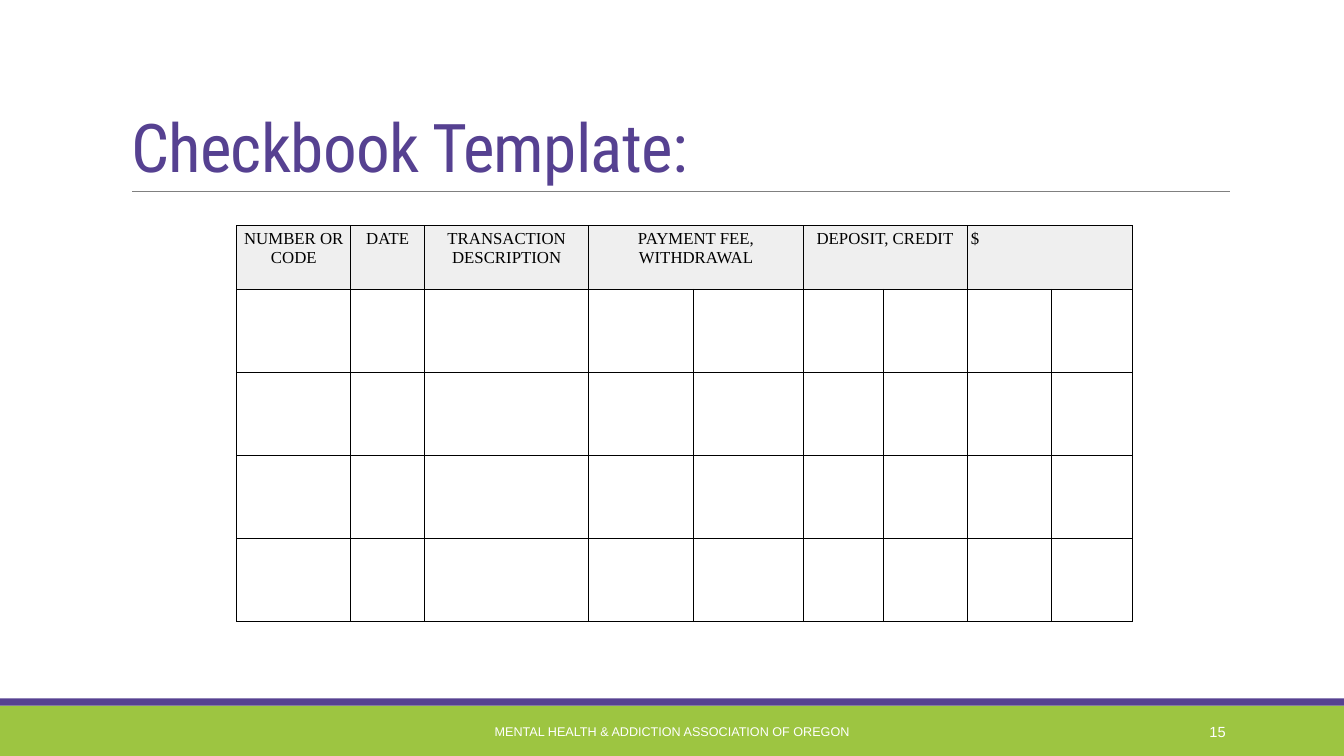
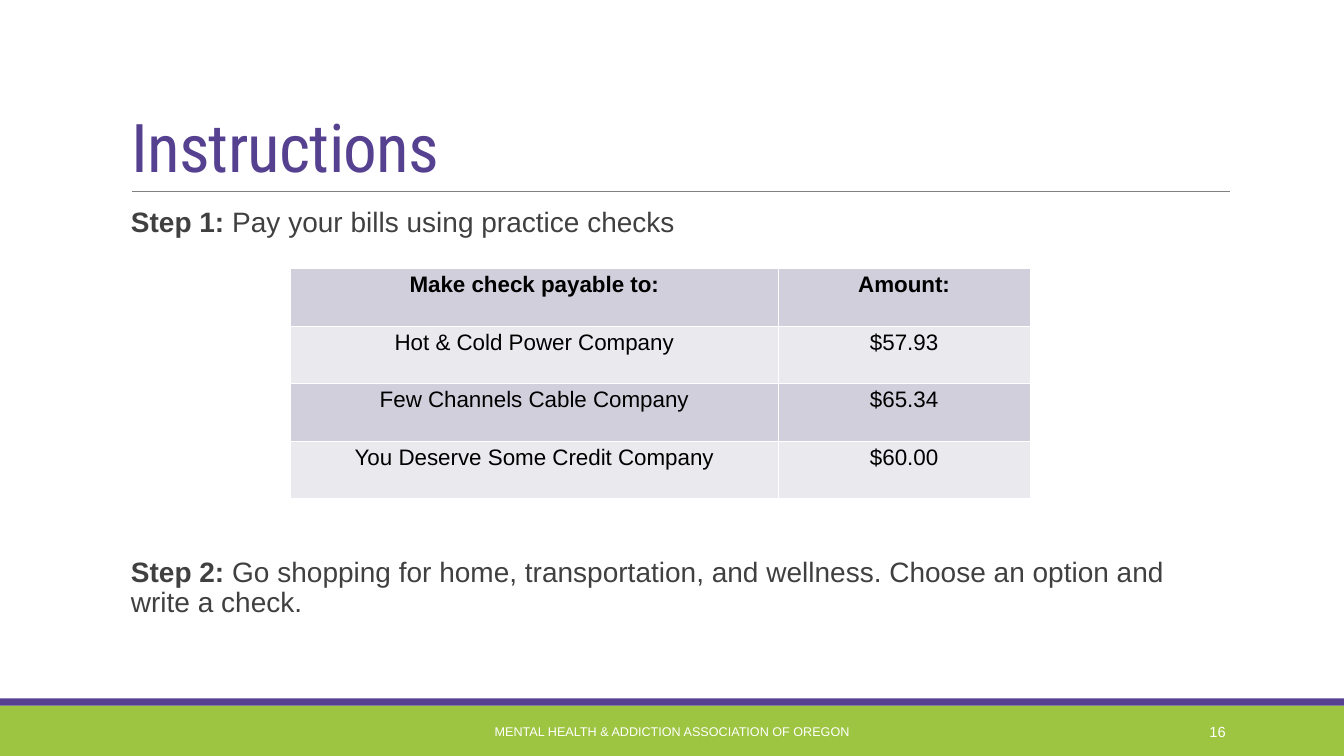
"""Build two checkbook practice slides with a shared title style, bands and footer."""
import pptx
import pptx.dml.color
import pptx.enum.shapes
import pptx.enum.text
import pptx.oxml
import pptx.oxml.ns
import pptx.util
import lxml.etree

Cm = pptx.util.Cm
Pt = pptx.util.Pt
RGB = pptx.dml.color.RGBColor.from_string
ALIGN = pptx.enum.text.PP_ALIGN
ANCHOR = pptx.enum.text.MSO_ANCHOR
qn = pptx.oxml.ns.qn

COLORS = {
    "purple": "564191", "green": "9DC541", "rule": "808080", "white": "FFFFFF",
    "black": "000000", "body": "404040", "header": "EFEFEF",
    "band_dark": "D1CFDC", "band_light": "E9E9EE",
}
WIDTH, HEIGHT = 33.87, 19.05
FOOTER = "MENTAL HEALTH & ADDICTION ASSOCIATION OF OREGON"
FIRST_NUMBER = 15


def write(p, text, size, color, font="Arial", bold=False, align=ALIGN.LEFT,
          line=1.0, after=0):
    """Add a formatted run to a paragraph."""
    p.alignment = align
    p.line_spacing = line
    p.space_before = Pt(0)
    p.space_after = Pt(after)
    r = p.add_run()
    r.text = text
    r.font.size = Pt(size)
    r.font.name = font
    r.font.bold = bold
    r.font.color.rgb = RGB(COLORS[color])
    return r


def add_grid(s, left, top, widths, heights, border, border_pt, margin_x, margin_y):
    """Add a plain table with every cell border drawn."""
    sp = s.shapes.add_table(len(heights), len(widths), Cm(left), Cm(top),
                            Cm(sum(widths)), Cm(sum(heights)))
    table = sp.table
    table.first_row = table.horz_banding = False
    for column, width in zip(table.columns, widths):
        column.width = Cm(width)
    for row, height in zip(table.rows, heights):
        row.height = Cm(height)
    for cell in table.iter_cells():
        cell.margin_left = cell.margin_right = Cm(margin_x)
        cell.margin_top = cell.margin_bottom = Cm(margin_y)
        tc_pr = cell._tc.get_or_add_tcPr()
        for side in ("a:lnL", "a:lnR", "a:lnT", "a:lnB"):
            ln = lxml.etree.SubElement(tc_pr, qn(side), w=str(Pt(border_pt)))
            fill = lxml.etree.SubElement(ln, qn("a:solidFill"))
            lxml.etree.SubElement(fill, qn("a:srgbClr"), val=COLORS[border])
        cell.fill.background()
    return table


prs = pptx.Presentation()
prs.slide_width, prs.slide_height = Cm(WIDTH), Cm(HEIGHT)

slides = []
for number, title in enumerate(["Checkbook Template:", "Instructions"], FIRST_NUMBER):
    s = prs.slides.add_slide(prs.slide_layouts[5])
    slides.append(s)

    for top, height, color in [(17.78, 1.27, "green"), (17.6, 0.18, "purple")]:
        sp = s.shapes.add_shape(pptx.enum.shapes.MSO_SHAPE.RECTANGLE,
                                0, Cm(top), Cm(WIDTH), Cm(height))
        sp.shadow.inherit = False
        sp.fill.solid()
        sp.fill.fore_color.rgb = RGB(COLORS[color])
        sp.line.fill.background()

    rule = s.shapes.add_connector(pptx.enum.shapes.MSO_CONNECTOR.STRAIGHT,
                                  Cm(3.33), Cm(4.82), Cm(31), Cm(4.82))
    rule.line.color.rgb = RGB(COLORS["rule"])
    rule.line.width = Pt(0.5)
    lxml.etree.SubElement(rule._element.spPr, qn("a:effectLst"))

    sp = s.shapes.title
    sp.left, sp.top, sp.width, sp.height = Cm(3.05), Cm(0.79), Cm(27.94), Cm(4.04)
    tf = sp.text_frame
    tf.auto_size = pptx.enum.text.MSO_AUTO_SIZE.NONE
    tf.vertical_anchor = ANCHOR.BOTTOM
    r = write(tf.paragraphs[0], title, 48, "purple", font="Roboto Condensed", line=0.85)
    r.font._element.set("spc", "-50")

    for left, width, text, size, align in [
        (10.24, 13.39, FOOTER, 9, ALIGN.CENTER),
        (27.51, 3.63, str(number), 10.5, ALIGN.RIGHT),
    ]:
        tf = s.shapes.add_textbox(Cm(left), Cm(17.93), Cm(width), Cm(1.02)).text_frame
        tf.word_wrap = True
        tf.vertical_anchor = ANCHOR.MIDDLE
        write(tf.paragraphs[0], text, size, "white", align=align)

checkbook, instructions = slides

register = add_grid(checkbook, 5.97, 5.69,
                    [2.87, 1.86, 4.14, 2.63, 2.77, 2.03, 2.1, 2.13, 2.03],
                    [1.6] + [2.09] * 4, "black", 0.75, 0.1, 0.1)
for column, span, text, align in [
    (0, 1, "NUMBER OR CODE", ALIGN.CENTER),
    (1, 1, "DATE", ALIGN.CENTER),
    (2, 1, "TRANSACTION DESCRIPTION", ALIGN.CENTER),
    (3, 2, "PAYMENT FEE, WITHDRAWAL", ALIGN.CENTER),
    (5, 2, "DEPOSIT, CREDIT", ALIGN.CENTER),
    (7, 2, "$", ALIGN.LEFT),
]:
    cell = register.cell(0, column)
    if span > 1:
        cell.merge(register.cell(0, column + span - 1))
    cell.fill.solid()
    cell.fill.fore_color.rgb = RGB(COLORS["header"])
    write(cell.text_frame.paragraphs[0], text, 12, "black", font="Times New Roman",
          align=align, after=6)

for top, height, label, text in [
    (5.13, 1.1, "Step 1: ", "Pay your bills using practice checks"),
    (13.95, 1.9, "Step 2: ", "Go shopping for home, transportation, and wellness. "
                             "Choose an option and write a check."),
]:
    tf = instructions.shapes.add_textbox(Cm(3.05), Cm(top), Cm(27.94), Cm(height)).text_frame
    tf.word_wrap = True
    tf.margin_left, tf.margin_right = Cm(0.25), 0
    p = tf.paragraphs[0]
    write(p, label, 20, "body", bold=True, line=0.9)
    write(p, text, 20, "body", line=0.9)

bills = [
    ("Make check payable to:", "Amount:"),
    ("Hot & Cold Power Company", "$57.93"),
    ("Few Channels Cable Company", "$65.34"),
    ("You Deserve Some Credit Company", "$60.00"),
]
payments = add_grid(instructions, 7.32, 6.77, [12.29, 6.35], [1.45] * len(bills),
                    "white", 1, 0.18, 0)
for i, bill in enumerate(bills):
    for j, text in enumerate(bill):
        cell = payments.cell(i, j)
        cell.fill.solid()
        cell.fill.fore_color.rgb = RGB(COLORS["band_light" if i % 2 else "band_dark"])
        write(cell.text_frame.paragraphs[0], text, 16, "black", bold=i == 0,
              align=ALIGN.CENTER, line=1.15)

prs.save("out.pptx")
